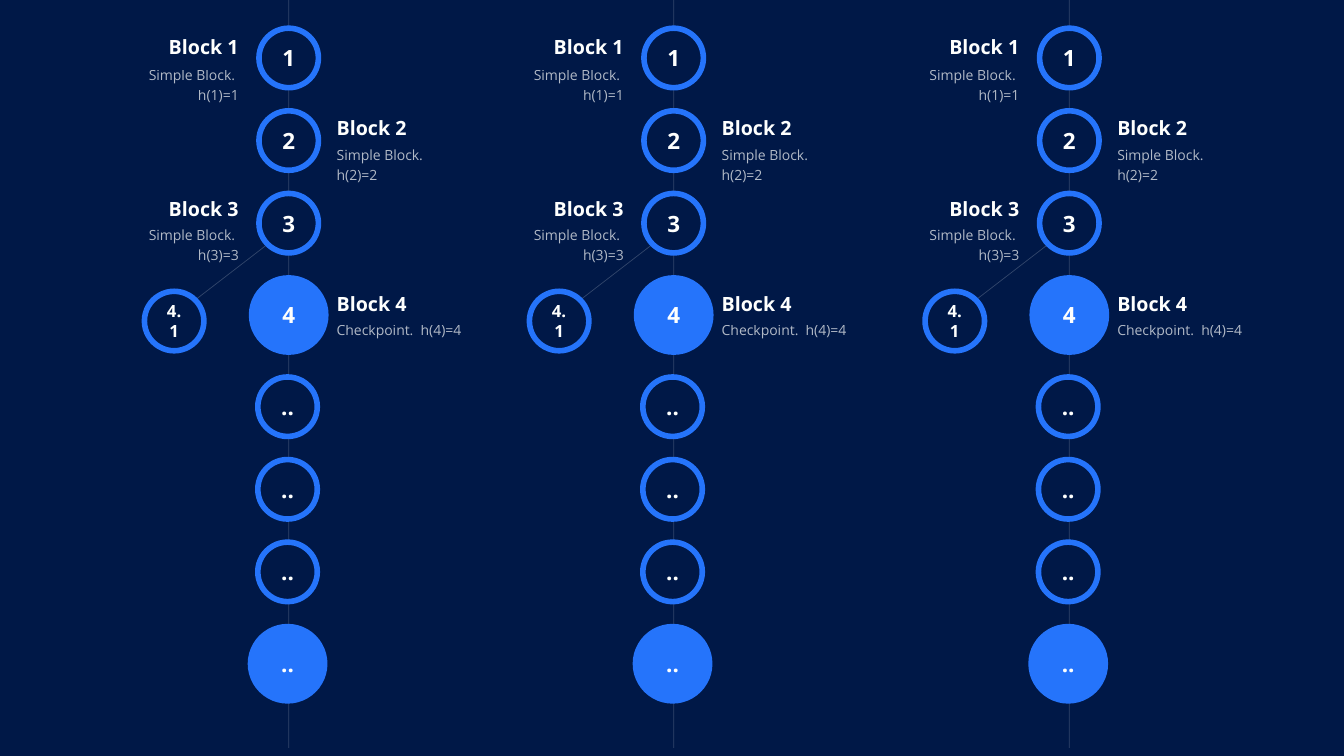
from math import sqrt

from pptx import Presentation
from pptx.dml.color import RGBColor
from pptx.enum.shapes import MSO_CONNECTOR, MSO_SHAPE
from pptx.enum.text import MSO_ANCHOR, MSO_AUTO_SIZE, PP_ALIGN
from pptx.oxml.ns import qn
from pptx.oxml.xmlchemy import OxmlElement
from pptx.util import Pt

COLORS = {"night": "001847", "blue": "2574FB", "white": "FEFFFE"}
FONT = "Open Sans"

CHAIN_CENTERS = [206.2, 481.2, 763.8]
RING, DISK = 42.5, 57
RING_GAP_Y = 59
FIRST_Y, CHECKPOINT_Y = 41.4, 225
FIRST_PENDING_Y, LAST_CHECKPOINT_Y = 290.5, 474.1
PENDING_DX = -0.8
FORK_DX, FORK_Y = -81.8, 229.3
CHAIN_END = 534.2
LABEL_WIDTH, LEFT_LABEL_DX, RIGHT_LABEL_DX = 92, -127.7, 34.3

# text, horizontal offset, centre height, diameter, text size
NODES = [(str(i + 1), 0, FIRST_Y + i * RING_GAP_Y, RING, 16) for i in range(3)]
NODES += [
    ("4", 0, CHECKPOINT_Y, DISK, 16),
    ("4.1", FORK_DX, FORK_Y, RING, 12),
]
NODES += [("..", PENDING_DX, FIRST_PENDING_Y + i * RING_GAP_Y, RING, 16) for i in range(3)]
NODES += [("..", PENDING_DX, LAST_CHECKPOINT_Y, DISK, 16)]

# heading, heading top, detail, detail top, side
LABELS = [
    ("Block 1", 21.6, "Simple Block.  h(1)=1", 41.8, "left"),
    ("Block 2", 79.2, "Simple Block.  h(2)=2", 98.6, "right"),
    ("Block 3", 136.8, "Simple Block.  h(3)=3", 155.5, "left"),
    ("Block 4", 205.2, "Checkpoint.  h(4)=4", 223.9, "right"),
]


def rgb(name):
    return RGBColor.from_string(COLORS[name])


def set_opacity(element, percent):
    for color in element.iter(qn("a:srgbClr")):
        alpha = OxmlElement("a:alpha")
        alpha.set("val", str(percent * 1000))
        color.append(alpha)


def format_text(paragraph, text, size, bold, alignment):
    paragraph.text = text
    paragraph.alignment = alignment
    font = paragraph.font
    font.name, font.size, font.bold = FONT, Pt(size), bold
    font.color.rgb = rgb("white")


def add_line(slide, x1, y1, x2, y2):
    line = slide.shapes.add_connector(MSO_CONNECTOR.STRAIGHT, Pt(x1), Pt(y1), Pt(x2), Pt(y2))
    line.line.color.rgb = rgb("white")
    line.line.width = Pt(0.5)
    properties = line._element.spPr
    set_opacity(properties, 20)
    properties.append(OxmlElement("a:effectLst"))


def add_node(slide, text, x, y, diameter, size):
    """Centre a circle on (x, y): a ring for a block, a filled disk for a checkpoint."""
    node = slide.shapes.add_shape(MSO_SHAPE.OVAL, Pt(x - diameter / 2), Pt(y - diameter / 2),
                                  Pt(diameter), Pt(diameter))
    node.shadow.inherit = False
    node.fill.solid()
    if diameter == DISK:
        node.fill.fore_color.rgb = rgb("blue")
        node.line.fill.background()
    else:
        node.fill.fore_color.rgb = rgb("night")
        node.line.color.rgb = rgb("blue")
        node.line.width = Pt(4)
    node.text_frame.vertical_anchor = MSO_ANCHOR.MIDDLE
    format_text(node.text_frame.paragraphs[0], text, size, True, PP_ALIGN.CENTER)


def add_label(slide, text, x, y, height, size, bold, alignment):
    box = slide.shapes.add_textbox(Pt(x), Pt(y), Pt(LABEL_WIDTH), Pt(height))
    frame = box.text_frame
    frame.word_wrap = True
    frame.auto_size = MSO_AUTO_SIZE.SHAPE_TO_FIT_TEXT
    frame.margin_left = frame.margin_right = 0
    paragraph = frame.paragraphs[0]
    format_text(paragraph, text, size, bold, alignment)
    return paragraph


def add_chain(slide, center):
    add_line(slide, center, 0, center, FIRST_Y - RING / 2)
    add_line(slide, center, FIRST_Y + RING / 2, center, CHECKPOINT_Y - DISK / 2)
    add_line(slide, center, CHECKPOINT_Y + DISK / 2, center, CHAIN_END)
    diagonal = RING / 2 / sqrt(2)
    third_y = FIRST_Y + 2 * RING_GAP_Y
    add_line(slide, center - diagonal, third_y + diagonal,
             center + FORK_DX + diagonal, FORK_Y - diagonal)
    for text, dx, y, diameter, size in NODES:
        add_node(slide, text, center + dx, y, diameter, size)
    for heading, heading_y, detail, detail_y, side in LABELS:
        on_left = side == "left"
        x = center + (LEFT_LABEL_DX if on_left else RIGHT_LABEL_DX)
        alignment = PP_ALIGN.RIGHT if on_left else PP_ALIGN.LEFT
        add_label(slide, heading, x, heading_y, 24.2, 14, True, alignment)
        paragraph = add_label(slide, detail, x, detail_y, 21, 10, False, alignment)
        paragraph.line_spacing = 1.2
        set_opacity(paragraph._p, 70)


def main():
    presentation = Presentation()
    presentation.slide_width, presentation.slide_height = Pt(960), Pt(540)
    slide = presentation.slides.add_slide(presentation.slide_layouts[6])
    slide.background.fill.solid()
    slide.background.fill.fore_color.rgb = rgb("night")
    for center in CHAIN_CENTERS:
        add_chain(slide, center)
    presentation.save("out.pptx")


if __name__ == "__main__":
    main()
